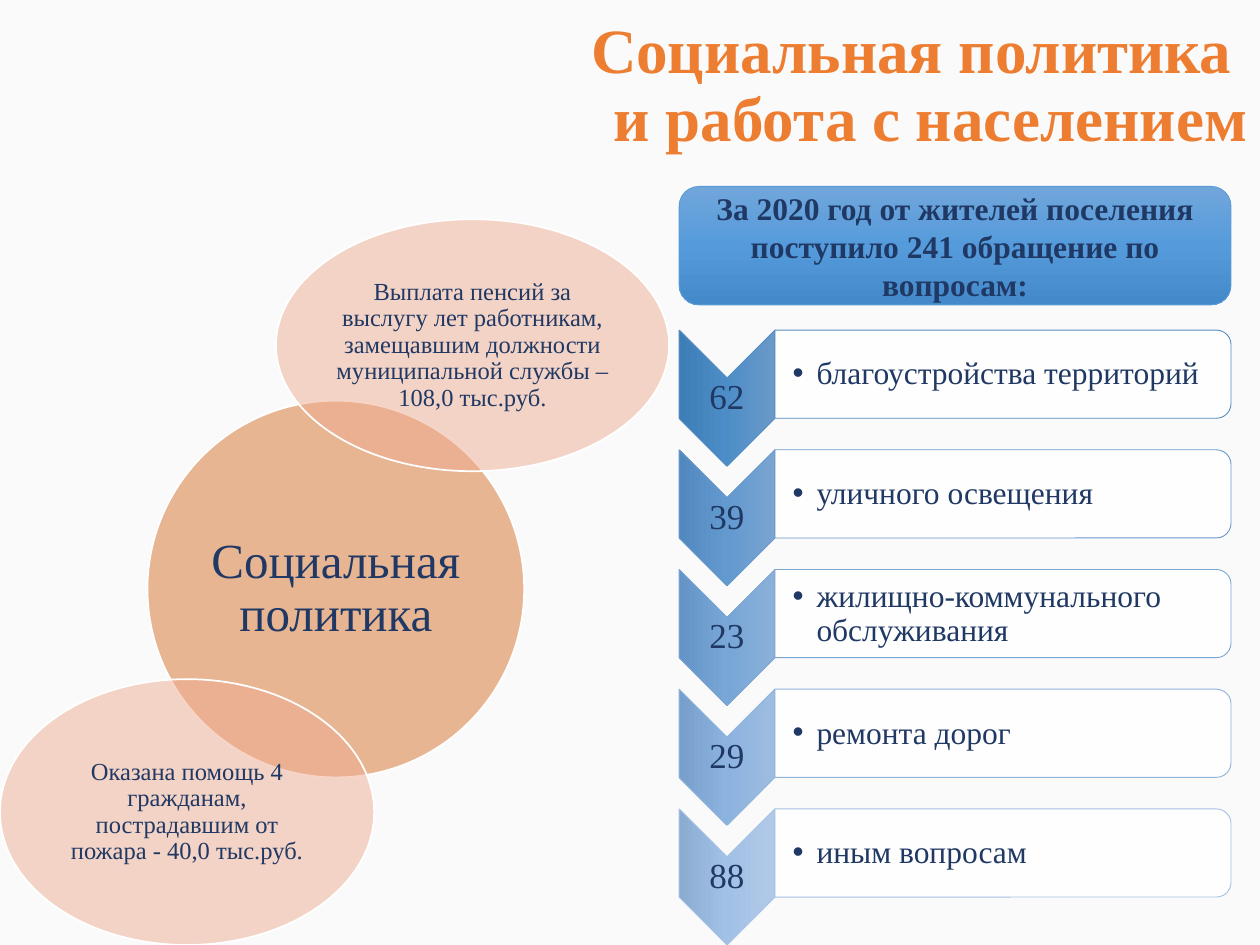
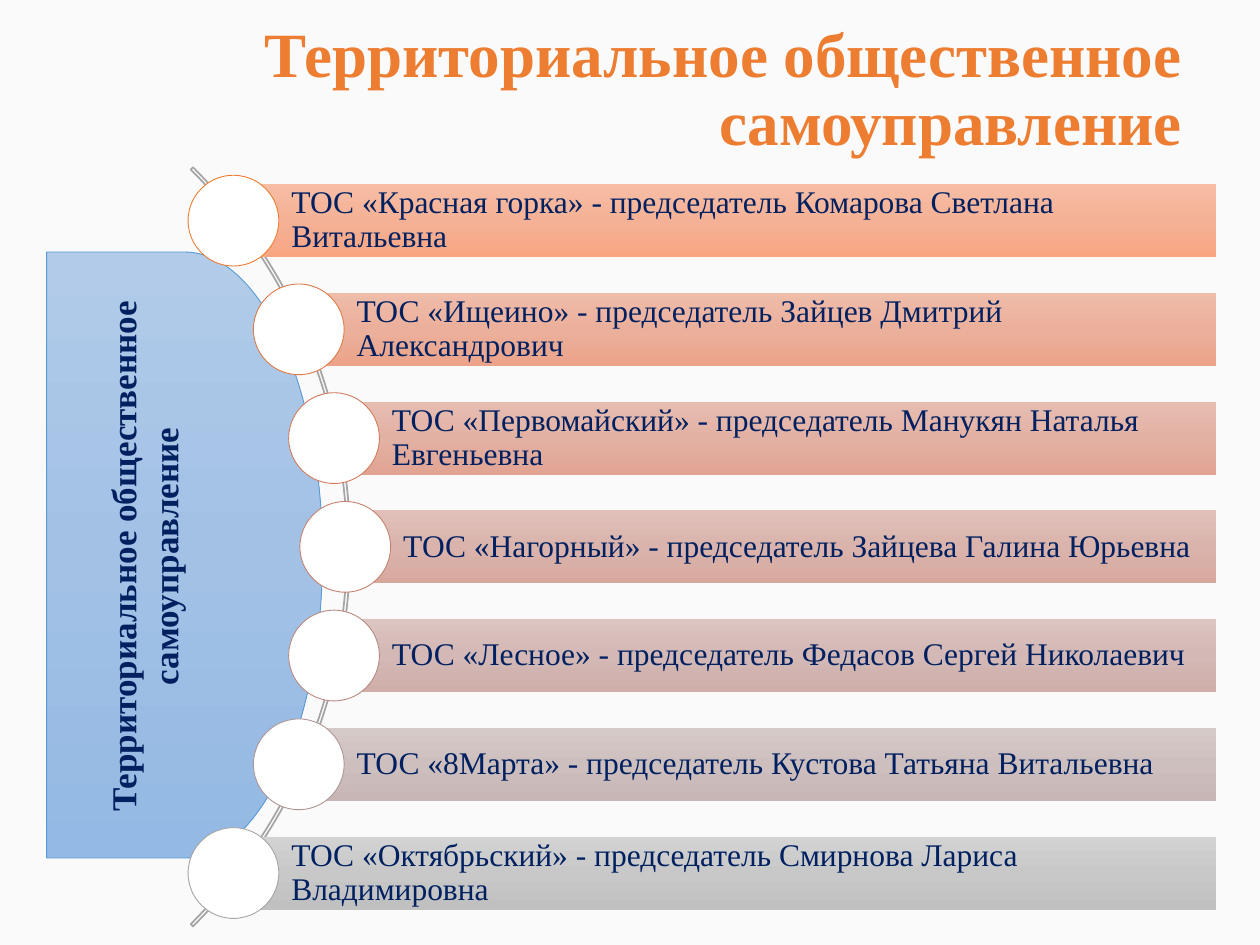
from dataclasses import dataclass
from math import sqrt

from lxml.etree import SubElement as Sub
from pptx import Presentation as Deck
from pptx.dml.color import RGBColor as Rgb
from pptx.enum.shapes import MSO_SHAPE as Form
from pptx.enum.text import MSO_ANCHOR as Anchor, MSO_AUTO_SIZE as Fit, PP_ALIGN as Align
from pptx.oxml.ns import qn
from pptx.util import Inches, Pt


@dataclass(frozen=True)
class Theme:
    font: str = "Times New Roman"
    back: str = "FAFAFA"
    white: str = "FFFFFF"
    head: str = "ED7D31"
    ink: str = "203864"
    navy: str = "002060"
    blue: str = "5B9BD5"
    gray: str = "A5A5A5"
    core: str = "D7712C"
    petal: str = "EEAD92"
    banner: tuple = ("71A6DB", "559BDB", "448ACA")
    panel: tuple = ("B1CBE9", "A3C1E5", "93B9E4")
    title: int = 36
    large: int = 28
    mid: int = 20
    text: int = 18
    small: int = 14


TOPICS = [
    ("62", "благоустройства территорий", "538DC1", ("6B99C9", "4D8DC7", "3E7EB7")),
    ("39", "уличного освещения", "6799CA", ("7AA4D1", "6299CF", "5188BE")),
    ("23", "жилищно-коммунального обслуживания", "7BA6D3", ("8BB0D9", "77A6D7", "6493C5")),
    ("29", "ремонта дорог", "90B3DB", ("9EBCE0", "8CB3DF", "789FCB")),
    ("88", "иным вопросам", "A5C1E3", ("B1C9E7", "A2C1E6", "8CABD1")),
]

UNITS = [
    ("Красная горка", "Комарова Светлана Витальевна", "ED7D31", ("F7BDA5", "F5B196", "F8A582")),
    ("Ищеино", "Зайцев Дмитрий Александрович", "DE7A47", ("EFBCAA", "EBB09C", "ECA389")),
    ("Первомайский", "Манукян Наталья Евгеньевна", "D17B5C", ("E7BDB1", "E2B1A3", "E1A493")),
    ("Нагорный", "Зайцева Галина Юрьевна", "C48170", ("E0C0B9", "DAB4AC", "D7A89E")),
    ("Лесное", "Федасов Сергей Николаевич", "B98A82", ("DBC4C1", "D3B8B5", "CFAEA9")),
    ("8Марта", "Кустова Татьяна Витальевна", "AE9694", ("D6CAC9", "CDBFBE", "C7B6B5")),
    ("Октябрьский", "Смирнова Лариса Владимировна", "A5A5A5", ("D2D2D2", "C8C8C8", "C0C0C0")),
]


def write(shape, text, *, font, size, color, bold=False, align=Align.CENTER,
          anchor=Anchor.MIDDLE, pads=(0.1, 0.05, 0.1, 0.05), lead=0.9, dot=0):
    frame = shape.text_frame
    frame.word_wrap = True
    frame.auto_size = Fit.NONE
    frame.vertical_anchor = anchor
    (frame.margin_left, frame.margin_top,
     frame.margin_right, frame.margin_bottom) = map(Inches, pads)
    frame.text = text
    for para in frame.paragraphs:
        para.alignment = align
        para.line_spacing = lead
        if dot:
            props = para._p.get_or_add_pPr()
            props.set("marL", str(Inches(dot)))
            props.set("indent", str(-Inches(dot)))
            Sub(props, qn("a:buFont"), typeface="Arial")
            Sub(props, qn("a:buChar"), char="•")
        for run in para.runs:
            run.font.name = font
            run.font.size = Pt(size)
            run.font.bold = bold
            run.font.color.rgb = Rgb.from_string(color)


class Board:
    def __init__(self, theme):
        self.theme = theme
        self.deck = Deck()
        self.deck.slide_width, self.deck.slide_height = Inches(10), Inches(7.5)
        self.paint(self.deck.slide_master.background.fill, theme.back)

    def paint(self, fill, color):
        fill.solid()
        fill.fore_color.rgb = Rgb.from_string(color)

    def blend(self, fill, colors):
        fill.gradient()
        fill.gradient_angle = 270
        stops = fill._fill._gradFill.find(qn("a:gsLst"))
        for stop in list(stops):
            stops.remove(stop)
        for step, color in enumerate(colors):
            stop = Sub(stops, qn("a:gs"), pos=str(step * 50000))
            Sub(stop, qn("a:srgbClr"), val=color)

    def page(self, title, *box):
        self.slide = self.deck.slides.add_slide(self.deck.slide_layouts[5])
        head = self.slide.shapes.title
        head.left, head.top, head.width, head.height = map(Inches, box)
        self.label(head, title, size=self.theme.title, color=self.theme.head,
                   bold=True, align=Align.RIGHT)

    def label(self, shape, text, **style):
        write(shape, text, font=self.theme.font, **style)

    def shape(self, form, x, y, w, h, fill=None, line=None, width=0.5, alpha=100, turn=0):
        if turn in (90, 270):
            x, y, w, h = x + (w - h) / 2, y + (h - w) / 2, h, w
        item = self.slide.shapes.add_shape(form, *map(Inches, (x, y, w, h)))
        item.rotation = turn
        item.shadow.inherit = False
        if fill is None:
            item.fill.background()
        elif isinstance(fill, tuple):
            self.blend(item.fill, fill)
        else:
            self.paint(item.fill, fill)
            if alpha < 100:
                tint = item.fill._xPr.find(qn("a:solidFill"))[0]
                Sub(tint, qn("a:alpha"), val=str(alpha * 1000))
        if line:
            item.line.color.rgb = Rgb.from_string(line)
            item.line.width = Pt(width)
        else:
            item.line.fill.background()
        return item

    def note(self, text, x, y, w, h, turn=0, **style):
        box = self.slide.shapes.add_textbox(*map(Inches, (x, y, w, h)))
        box.rotation = turn
        self.label(box, text, **style)

    def bubble(self, text, x, y, w, h, fill, size, pad):
        oval = self.shape(Form.OVAL, x, y, w, h, fill, self.theme.white, 1, 50)
        self.label(oval, text, size=size, color=self.theme.ink, pads=(pad,) * 4)

    def topic(self, y, count, text, line, fill):
        ink = self.theme.ink
        self.shape(Form.CHEVRON, 5.39, y, 0.76, 1.08, fill, line, turn=90)
        self.note(count, 5.39, y + 0.38, 0.76, 0.32, size=self.theme.mid,
                  color=ink, pads=(0.01,) * 4)
        self.shape(Form.ROUND_2_SAME_RECTANGLE, 6.15, y, 3.62, 0.7,
                   self.theme.white, line, alpha=90, turn=90)
        self.note(text, 6.15, y + 0.04, 3.59, 0.63, size=self.theme.text, color=ink,
                  align=Align.LEFT, pads=(0.14, 0.01, 0.01, 0.01), dot=0.19)

    def unit(self, x, y, name, chair, line, fill):
        bar = self.shape(Form.RECTANGLE, x, y - 0.29, 9.65 - x, 0.58, fill)
        self.label(bar, f"ТОС «{name}» - председатель {chair}", size=self.theme.text,
                   color=self.theme.navy, align=Align.LEFT, pads=(0.46, 0.05, 0.05, 0.05))
        self.shape(Form.OVAL, x - 0.36, y - 0.36, 0.72, 0.72, self.theme.white, line)


def social(board):
    theme = board.theme
    board.page("Социальная политика \vи работа с населением", 0, 0.23, 10, 0.92)
    for row, topic in enumerate(TOPICS):
        board.topic(2.62 + row * 0.95, *topic)
    banner = board.shape(Form.ROUNDED_RECTANGLE, 5.39, 1.48, 4.38, 0.94,
                         theme.banner, theme.blue)
    board.label(banner, "За 2020 год от жителей поселения поступило 241 обращение по вопросам:",
                size=theme.text, color=theme.ink, bold=True, lead=1.0)
    board.bubble("Социальная политика", 1.17, 3.18, 2.99, 2.99, theme.core, theme.large, 0.04)
    board.bubble("Выплата пенсий за выслугу лет работникам, замещавшим должности "
                 "муниципальной службы – 108,0 тыс.руб.",
                 2.19, 1.74, 3.12, 2, theme.petal, theme.small, 0.02)
    board.bubble("Оказана помощь 4 гражданам, пострадавшим от пожара - 40,0 тыс.руб.",
                 0, 5.39, 2.97, 2.11, theme.petal, theme.small, 0.02)


def local(board):
    theme = board.theme
    title = "Территориальное общественное самоуправление"
    board.page(title, 0.86, 0, 8.62, 1.45)
    board.shape(Form.FLOWCHART_DELAY, 0.37, 2, 2.19, 4.81, theme.panel, theme.blue)
    arc = board.shape(Form.BLOCK_ARC, -5.74, 0.08, 8.52, 8.52, line=theme.gray, width=1)
    for spot, value in enumerate((189, 27, 3 / 1000)):
        arc.adjustments[spot] = value
    hub, mid, reach = -1.48, 4.34, 4.22
    for row, unit in enumerate(UNITS):
        rise = (row - len(UNITS) // 2) * 0.863
        board.unit(hub + sqrt(reach ** 2 - rise ** 2), mid + rise, *unit)
    board.note(title, -1.32, 4.03, 4.92, 0.77, turn=270, size=theme.mid,
               color=theme.navy, bold=True, anchor=Anchor.TOP, lead=1.0)


def main():
    board = Board(Theme())
    social(board)
    local(board)
    board.deck.save("out.pptx")


if __name__ == "__main__":
    main()
